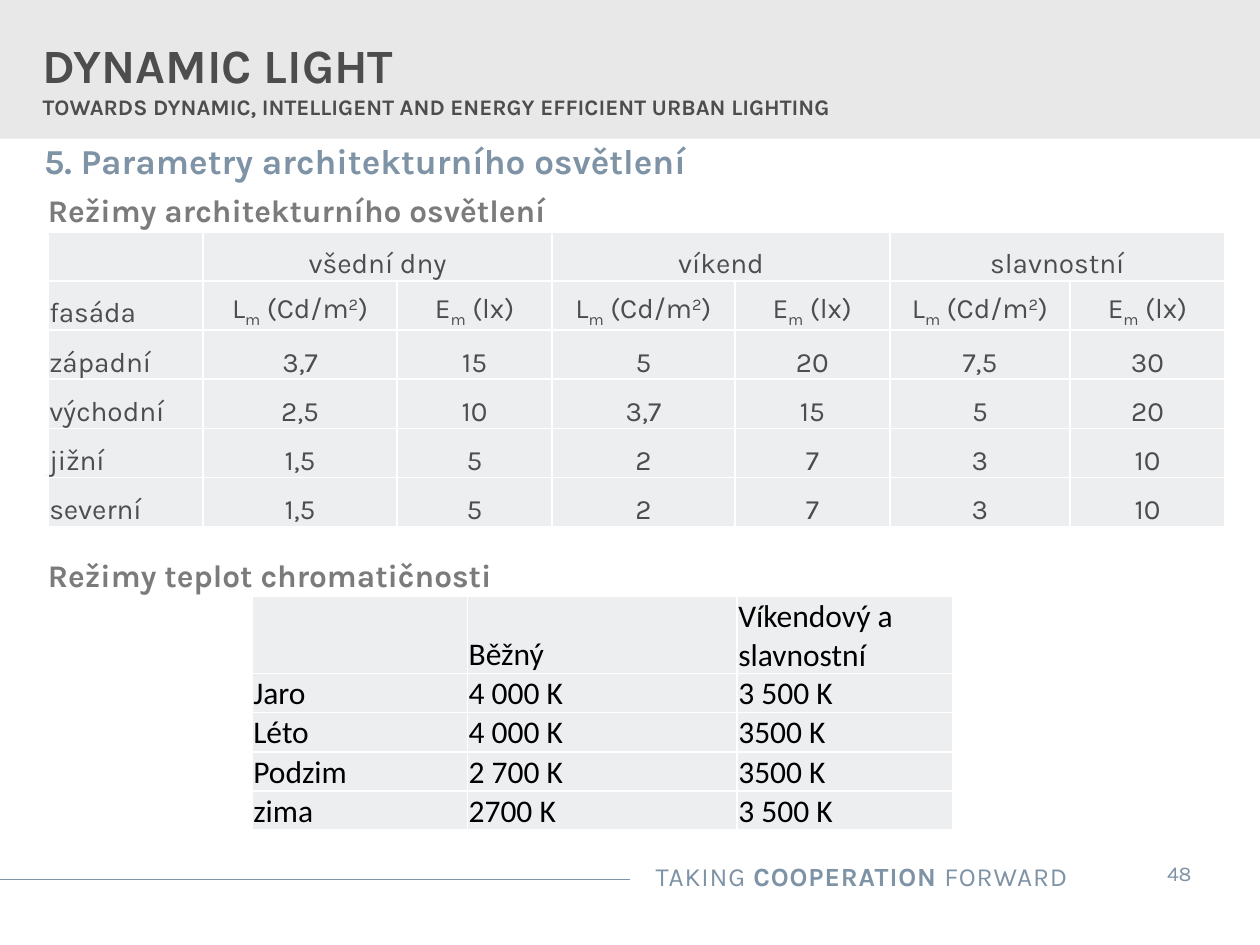
from dataclasses import dataclass

from lxml.etree import SubElement
from pptx import Presentation
from pptx.dml.color import RGBColor
from pptx.enum.shapes import MSO_CONNECTOR, MSO_SHAPE
from pptx.enum.text import MSO_ANCHOR as Anchor, PP_ALIGN as Align
from pptx.oxml.ns import qn
from pptx.util import Pt

COLORS = {"band": "E8E8E8", "cell": "ECEEF0", "border": "FFFFFF", "slate": "7E93A5",
          "gray": "7B7B7B", "charcoal": "4D4D4E", "black": "000000"}
KARLA = "Karla"
SUBSCRIPT, SUPERSCRIPT = -25000, 30000


@dataclass(frozen=True)
class TextStyle:
    size: float
    color: str
    font: str = KARLA
    bold: bool | None = None


@dataclass(frozen=True)
class Label:
    box: tuple[float, float, float, float]
    text: str
    style: TextStyle
    align: Align = Align.LEFT
    anchor: Anchor = Anchor.TOP
    inset: tuple[float, float] = (7.2, 3.6)
    wrap: bool = True
    line_spacing: float | None = None


@dataclass(frozen=True)
class Grid:
    left: float
    top: float
    height: float
    columns: list[float]
    row_heights: list[float]
    rows: list[list]
    style: TextStyle
    value_align: Align


def rgb(name: str) -> RGBColor:
    return RGBColor.from_string(COLORS[name])


def style_paragraph(paragraph, style: TextStyle, align: Align) -> None:
    paragraph.alignment = align
    font = paragraph.font
    font.name, font.size, font.bold = style.font, Pt(style.size), style.bold
    font.color.rgb = rgb(style.color)


def add_label(slide, label: Label):
    """Add a text box and return its paragraph."""
    frame = slide.shapes.add_textbox(*map(Pt, label.box)).text_frame
    frame.word_wrap = label.wrap
    frame.vertical_anchor = label.anchor
    frame.margin_left = frame.margin_right = Pt(label.inset[0])
    frame.margin_top = frame.margin_bottom = Pt(label.inset[1])
    paragraph = frame.paragraphs[0]
    if label.text:
        paragraph.add_run().text = label.text
    if label.line_spacing:
        paragraph.line_spacing = label.line_spacing
    style_paragraph(paragraph, label.style, label.align)
    return paragraph


def add_heading(slide, left: float, top: float, text: str, style: TextStyle) -> None:
    add_label(slide, Label((left, top, 425.5, 21.6), text, style, anchor=Anchor.MIDDLE,
                           inset=(0, 0), line_spacing=0.91))


def outline_cell(cell) -> None:
    properties = cell._tc.get_or_add_tcPr()
    for index, side in enumerate(("lnL", "lnR", "lnT", "lnB")):
        line = SubElement(properties, qn(f"a:{side}"), w=str(Pt(1)))
        properties.insert(index, line)
        fill = SubElement(line, qn("a:solidFill"))
        SubElement(fill, qn("a:srgbClr"), val=COLORS["border"])


def fill_cell(cell, content, style: TextStyle, align: Align) -> None:
    """Write a string, or a list of (text, baseline) pieces, into a cell."""
    cell.fill.solid()
    cell.fill.fore_color.rgb = rgb("cell")
    outline_cell(cell)
    cell.vertical_anchor = Anchor.BOTTOM
    cell.margin_left = cell.margin_right = cell.margin_top = Pt(0.75)
    cell.margin_bottom = 0
    paragraph = cell.text_frame.paragraphs[0]
    pieces = [(content, 0)] if isinstance(content, str) else content
    for text, baseline in pieces:
        if text:
            run = paragraph.add_run()
            run.text = text
            if baseline:
                run.font._rPr.set("baseline", str(baseline))
    style_paragraph(paragraph, style, align)


def add_grid(slide, grid: Grid):
    frame = slide.shapes.add_table(len(grid.rows), len(grid.columns), Pt(grid.left),
                                   Pt(grid.top), Pt(sum(grid.columns)), Pt(grid.height))
    table = frame.table
    table.first_row = table.horz_banding = False
    for column, width in zip(table.columns, grid.columns):
        column.width = Pt(width)
    for row, height, contents in zip(table.rows, grid.row_heights, grid.rows):
        row.height = Pt(height)
        for index, (cell, content) in enumerate(zip(row.cells, contents)):
            fill_cell(cell, content, grid.style, grid.value_align if index else Align.LEFT)
    frame.height = Pt(grid.height)
    return table


def add_banner(slide) -> None:
    band = slide.shapes.add_shape(MSO_SHAPE.RECTANGLE, 0, 0, Pt(720), Pt(79.2))
    band.shadow.inherit = False
    band.fill.solid()
    band.fill.fore_color.rgb = rgb("band")
    band.line.fill.background()

    title = add_label(slide, Label((0, 17.3, 519.8, 54), "",
                                   TextStyle(27.3, "charcoal", bold=True), anchor=Anchor.MIDDLE))
    title._p.get_or_add_pPr().set("marL", str(Pt(17.3)))
    project = title.add_run()
    project.text, project.font.size = "DYNAMIC LIGHT", Pt(27.3)
    title.add_line_break()
    subtitle = title.add_run()
    subtitle.text = "TOWARDS DYNAMIC, INTELLIGENT AND ENERGY EFFICIENT URBAN LIGHTING"
    subtitle.font.size = Pt(12.7)


def add_footer(slide) -> None:
    rule = slide.shapes.add_connector(MSO_CONNECTOR.STRAIGHT, 0, Pt(502.6), Pt(360), Pt(502.6))
    rule.line.color.rgb = rgb("slate")
    rule.line.width = Pt(0.75)
    SubElement(rule._element.spPr, qn("a:effectLst"))

    motto = add_label(slide, Label((279.4, 488.2, 337.7, 25.2), "", TextStyle(15, "slate"),
                                   Align.RIGHT))
    for text, bold in (("TAKING ", False), ("COOPERATION", True), (" FORWARD", False)):
        run = motto.add_run()
        run.text, run.font.bold = text, bold
        run.font._rPr.set("spc", "50")
    add_label(slide, Label((647.3, 484.6, 53.3, 28.8), "48", TextStyle(12, "slate"),
                           Align.CENTER, inset=(14.4, 7.2), wrap=False))


def main() -> None:
    deck = Presentation()
    deck.slide_width, deck.slide_height = Pt(720), Pt(540)
    slide = deck.slides.add_slide(deck.slide_layouts[6])
    add_banner(slide)
    add_footer(slide)

    section = TextStyle(18, "gray", bold=True)
    add_heading(slide, 25.2, 82.1, "5. Parametry architekturního osvětlení",
                TextStyle(20, "slate", bold=True))
    add_heading(slide, 27.4, 110.2, "Režimy architekturního osvětlení", section)
    add_heading(slide, 27.4, 319, "Režimy teplot chromatičnosti", section)

    luminance = [("L", 0), ("m", SUBSCRIPT), (" (Cd/m", 0), ("2", SUPERSCRIPT), (")", 0)]
    illuminance = [("E", 0), ("m", SUBSCRIPT), (" (lx)", 0)]
    facades = add_grid(slide, Grid(
        27.4, 132.5, 168.5, [88.6, 110.9, 88.6, 104.4, 88.6, 103, 88.6], [28.08] * 6,
        [["", "všední dny", "", "víkend", "", "slavnostní", ""],
         ["fasáda"] + [luminance, illuminance] * 3,
         ["západní", "3,7", "15", "5", "20", "7,5", "30"],
         ["východní", "2,5", "10", "3,7", "15", "5", "20"],
         ["jižní", "1,5", "5", "2", "7", "3", "10"],
         ["severní", "1,5", "5", "2", "7", "3", "10"]],
        TextStyle(16, "charcoal"), Align.CENTER))
    for first in (1, 3, 5):
        facades.cell(0, first).merge(facades.cell(0, first + 1))

    add_grid(slide, Grid(
        144, 340.9, 133.2, [123.1, 154.1, 123.1], [18.7, 15.1, 15.1, 15.1, 15.8],
        [["", "Běžný", "Víkendový a slavnostní"],
         ["Jaro", "4 000 K", "3 500 K"],
         ["Léto", "4 000 K", "3500 K"],
         ["Podzim", "2 700 K", "3500 K"],
         ["zima", "2700 K", "3 500 K"]],
        TextStyle(18, "black", "Calibri"), Align.LEFT))

    deck.save("out.pptx")


if __name__ == "__main__":
    main()
